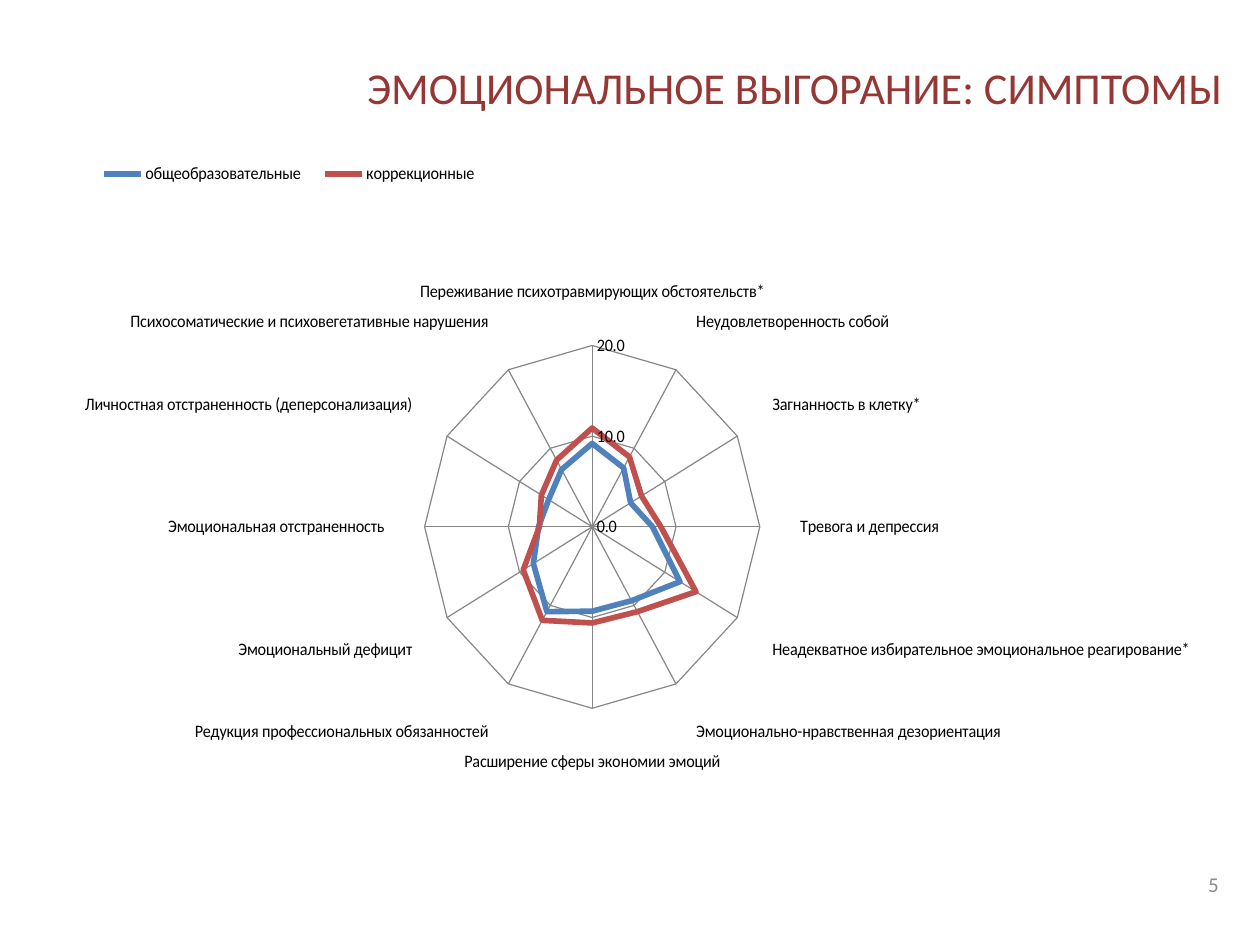
from lxml.etree import SubElement as Sub
from pptx import Presentation as Deck
from pptx.chart.data import CategoryChartData as Data
from pptx.dml.color import RGBColor as Rgb
from pptx.enum.chart import XL_CHART_TYPE as Kind, XL_LEGEND_POSITION as Side
from pptx.enum.chart import XL_MARKER_STYLE as Mark, XL_TICK_MARK as Tick
from pptx.enum.text import MSO_ANCHOR as Anchor, PP_ALIGN as Align
from pptx.oxml.ns import qn
from pptx.util import Pt

SCALE = 914400 / 126
CATS = [
    "Переживание психотравмирующих обстоятельств*",
    "Неудовлетворенность собой",
    "Загнанность в клетку*",
    "Тревога и депрессия",
    "Неадекватное избирательное эмоциональное реагирование*",
    "Эмоционально-нравственная дезориентация",
    "Расширение сферы экономии эмоций",
    "Редукция профессиональных обязанностей",
    "Эмоциональный дефицит",
    "Эмоциональная отстраненность",
    "Личностная отстраненность (деперсонализация)",
    "Психосоматические и психовегетативные нарушения",
]
ROWS = [
    ("общеобразовательные", "4F81BD",
     [9.2, 7.5, 5.3, 7.2, 12.1, 9.4, 9.3, 10.8, 8.1, 6.4, 6, 7.3]),
    ("коррекционные", "C0504D",
     [10.9, 8.9, 6.8, 8.2, 14.3, 10.8, 10.6, 11.9, 9.5, 6.3, 7, 8.5]),
]


def px(*nums):
    return [round(n * SCALE) for n in nums]


def tint(code):
    return Rgb.from_string(code)


def style(font, size, color, face="Calibri"):
    font.name, font.size = face, Pt(size)
    font.color.rgb = tint(color)


def write(shape, text, size=12, color="000000", align=Align.RIGHT):
    frame = shape.text_frame
    frame.word_wrap = True
    frame.vertical_anchor = Anchor.MIDDLE
    para = frame.paragraphs[0]
    para.alignment = align
    run = para.add_run()
    run.text = text
    style(run.font, size, color)


def place(node, **spots):
    for old in node.findall(qn("c:layout")):
        node.remove(old)
    base = Sub(node, qn("c:layout"))
    node.insert(1, base)
    man = Sub(base, qn("c:manualLayout"))
    for mode in ("xMode", "yMode"):
        Sub(man, qn("c:" + mode)).set("val", "edge")
    for key, val in spots.items():
        Sub(man, qn("c:" + key)).set("val", str(val))


class Board:
    grid = "868686"

    def __init__(self, deck):
        self.slide = deck.slides.add_slide(deck.slide_layouts[5])

    def title(self, text, box, **form):
        shape = self.slide.shapes.title
        shape.left, shape.top, shape.width, shape.height = px(*box)
        write(shape, text, **form)

    def label(self, text, box, **form):
        write(self.slide.shapes.add_textbox(*px(*box)), text, **form)

    def radar(self, cats, rows, box):
        data = Data(number_format="0.0")
        data.categories = cats
        for name, _, vals in rows:
            data.add_series(name, vals)
        chart = self.slide.shapes.add_chart(Kind.RADAR, *px(*box), data).chart
        chart.has_title = False
        style(chart.font, 10, "000000")
        plot = chart.plots[0]
        plot.vary_by_categories = False
        for line, (_, color, _) in zip(plot.series, rows):
            line.format.line.width = Pt(3.5)
            line.format.line.color.rgb = tint(color)
            line.marker.style = Mark.NONE
        self.axes(chart)
        chart.has_legend = True
        key = chart.legend
        key.position, key.include_in_layout = Side.TOP, False
        style(key.font, 10, "000000")
        place(chart.element.find(".//" + qn("c:legend")),
              x=0.02, y=0.02, w=0.39, h=0.04)

    def axes(self, chart):
        cat, val = chart.category_axis, chart.value_axis
        for axis, form in ((cat, "General"), (val, "0.0")):
            axis.has_major_gridlines = True
            edge = axis.major_gridlines.format.line
            edge.color.rgb, edge.width = tint(self.grid), Pt(0.75)
            axis.major_tick_mark = axis.minor_tick_mark = Tick.NONE
            axis.tick_labels.number_format = form
            axis.tick_labels.number_format_is_linked = False
            style(axis.tick_labels.font, 10, "000000")
        cat.format.line.fill.background()
        val.format.line.color.rgb = tint(self.grid)
        val.minimum_scale, val.maximum_scale, val.major_unit = 0, 20, 10


def main():
    deck = Deck()
    deck.slide_width, deck.slide_height = px(1260, 945)
    board = Board(deck)
    board.title("ЭМОЦИОНАЛЬНОЕ ВЫГОРАНИЕ: СИМПТОМЫ", (323, 38, 912, 97),
                size=25.2, color="953735")
    board.label("5", (937, 859, 294, 50), color="8C8C8C")
    board.radar(CATS, ROWS, (64, 145, 1134, 725))
    deck.save("out.pptx")


if __name__ == "__main__":
    main()
